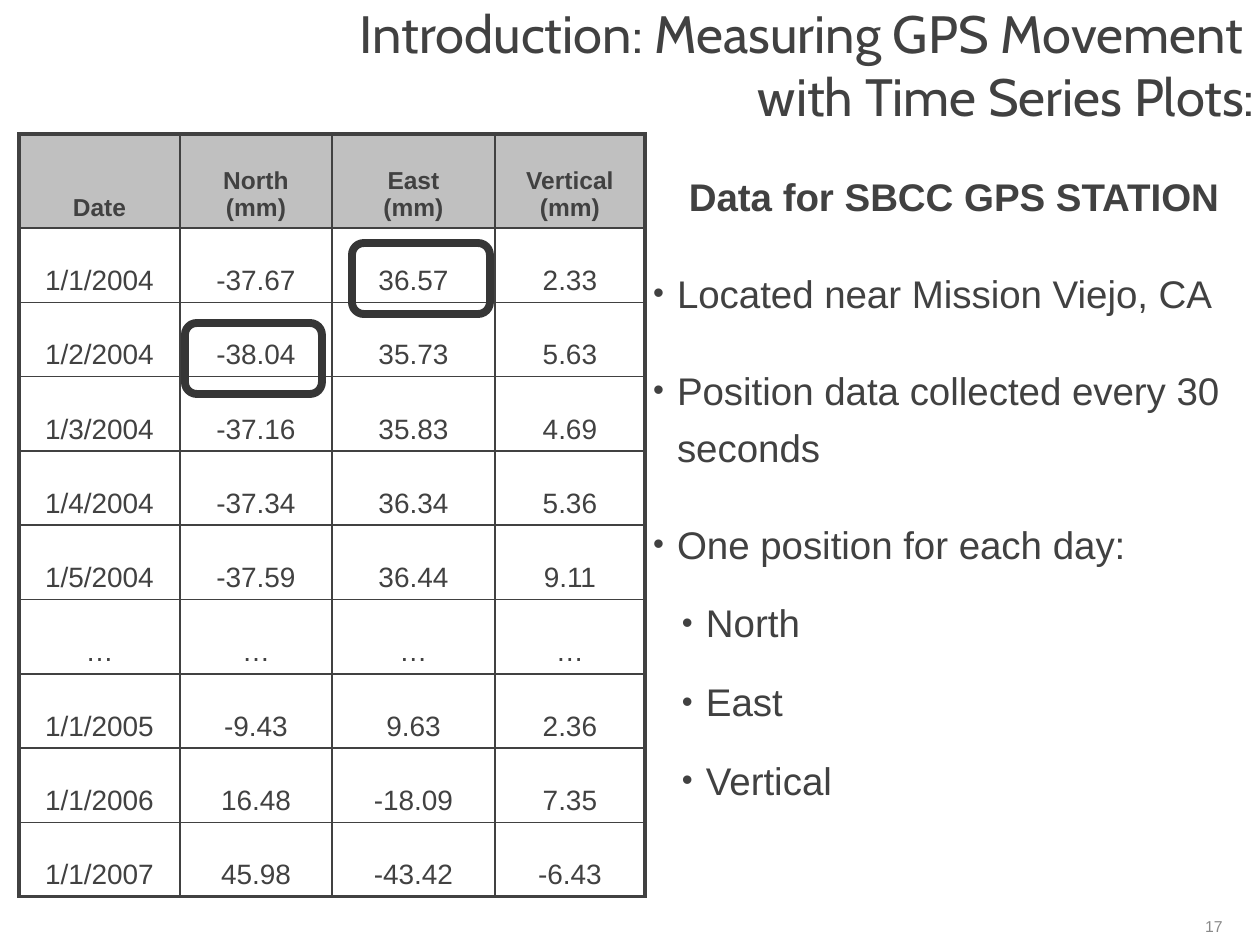
from dataclasses import dataclass

from lxml.etree import SubElement
from pptx import Presentation
from pptx.dml.color import RGBColor
from pptx.enum.shapes import MSO_SHAPE
from pptx.enum.text import MSO_ANCHOR, PP_ALIGN
from pptx.oxml.ns import qn
from pptx.util import Emu, Pt

EMU_PER_PX = 914400 / 126


@dataclass(frozen=True)
class Theme:
    ink: str = "414141"
    header_fill: str = "C0C0C0"
    highlight: str = "363636"
    muted: str = "898989"
    title_font: str = "Cabin"
    body_font: str = "Arial"
    title_size: int = 30
    body_size: int = 22
    header_size: int = 14
    cell_size: int = 16
    number_size: int = 9
    outer_border: float = 2.25
    inner_border: float = 1
    highlight_width: float = 4.5


THEME = Theme()

COLUMN_WIDTHS = [161, 152, 163, 150]
HEADER_HEIGHT = 94
DATA_HEIGHT = 669
ROWS = [
    ("Date", "North (mm)", "East (mm)", "Vertical (mm)"),
    ("1/1/2004", "-37.67", "36.57", "2.33"),
    ("1/2/2004", "-38.04", "35.73", "5.63"),
    ("1/3/2004", "-37.16", "35.83", "4.69"),
    ("1/4/2004", "-37.34", "36.34", "5.36"),
    ("1/5/2004", "-37.59", "36.44", "9.11"),
    ("…", "…", "…", "…"),
    ("1/1/2005", "-9.43", "9.63", "2.36"),
    ("1/1/2006", "16.48", "-18.09", "7.35"),
    ("1/1/2007", "45.98", "-43.42", "-6.43"),
]
HEADING = "Data for SBCC GPS STATION"
BULLETS = [
    (0, "Located near Mission Viejo, CA"),
    (0, "Position data collected every 30 seconds"),
    (0, "One position for each day:"),
    (1, "North"),
    (1, "East"),
    (1, "Vertical"),
]
HIGHLIGHTS = [(185, 323, 137, 71), (352, 243, 138, 71)]


def px(count):
    return Emu(round(count * EMU_PER_PX))


def rgb(code):
    return RGBColor.from_string(code)


def style(para, size, color=THEME.ink, name=THEME.body_font, bold=False,
          align=PP_ALIGN.LEFT):
    para.alignment = align
    para.font.size = Pt(size)
    para.font.name = name
    para.font.bold = bold
    para.font.color.rgb = rgb(color)


def set_margins(target, horizontal, vertical):
    target.margin_left = target.margin_right = px(horizontal)
    target.margin_top = target.margin_bottom = px(vertical)


def add_title(page, text):
    title = page.shapes.title
    title.left, title.top, title.width, title.height = map(px, (126, 0, 1134, 128))
    frame = title.text_frame
    frame.word_wrap = True
    frame.vertical_anchor = MSO_ANCHOR.MIDDLE
    set_margins(frame, 5, 3)
    frame.text = text
    style(frame.paragraphs[0], THEME.title_size, name=THEME.title_font,
          align=PP_ALIGN.RIGHT)


def add_text_box(page, left, top, width, height):
    box = page.shapes.add_textbox(px(left), px(top), px(width), px(height))
    box.text_frame.word_wrap = True
    return box.text_frame


def set_border(cell, side, width):
    line = SubElement(cell._tc.get_or_add_tcPr(), qn(f"a:ln{side}"), w=str(Pt(width)))
    fill = SubElement(line, qn("a:solidFill"))
    SubElement(fill, qn("a:srgbClr"), val=THEME.ink)


def fill_cell(cell, text, is_header, outer_sides):
    cell.text = text
    cell.vertical_anchor = MSO_ANCHOR.BOTTOM
    set_margins(cell, 25, 6)
    style(cell.text_frame.paragraphs[0],
          THEME.header_size if is_header else THEME.cell_size,
          bold=is_header, align=PP_ALIGN.CENTER)
    # Borders precede the fill in the cell properties.
    for side in "LRTB":
        set_border(cell, side,
                   THEME.outer_border if side in outer_sides else THEME.inner_border)
    if is_header:
        cell.fill.solid()
        cell.fill.fore_color.rgb = rgb(THEME.header_fill)
    else:
        cell.fill.background()


def add_data_table(page, left, top):
    last_row, last_column = len(ROWS) - 1, len(COLUMN_WIDTHS) - 1
    table = page.shapes.add_table(
        len(ROWS), len(COLUMN_WIDTHS), px(left), px(top),
        px(sum(COLUMN_WIDTHS)), px(HEADER_HEIGHT + DATA_HEIGHT)).table
    for column, width in zip(table.columns, COLUMN_WIDTHS):
        column.width = px(width)
    for r, values in enumerate(ROWS):
        table.rows[r].height = px(DATA_HEIGHT / last_row if r else HEADER_HEIGHT)
        for c, text in enumerate(values):
            edges = {"L": c == 0, "R": c == last_column, "T": r == 0, "B": r == last_row}
            outer_sides = [side for side, is_outer in edges.items() if is_outer]
            fill_cell(table.cell(r, c), text, r == 0, outer_sides)


def add_bullet(para, indent, hanging):
    props = para._p.get_or_add_pPr()
    props.set("marL", str(px(indent)))
    props.set("indent", str(-px(hanging)))
    color = SubElement(props, qn("a:buClr"))
    SubElement(color, qn("a:srgbClr"), val=THEME.ink)
    SubElement(props, qn("a:buSzPct"), val="81000")
    SubElement(props, qn("a:buFont"), typeface=THEME.body_font)
    SubElement(props, qn("a:buChar"), char="•")


def add_station_notes(page):
    frame = add_text_box(page, 648, 159, 612, 786)
    set_margins(frame, 5, 3)
    heading = frame.paragraphs[0]
    heading.text = HEADING
    heading.line_spacing = 1.25
    style(heading, THEME.body_size, bold=True, align=PP_ALIGN.CENTER)
    for level, text in BULLETS:
        para = frame.add_paragraph()
        para.text = text
        para.level = level
        para.line_spacing = 1.25
        para.space_before = Pt(12 if level else 22.2)
        add_bullet(para, 53 if level else 24, 24)
        style(para, THEME.body_size)


def add_highlight(page, left, top, width, height):
    frame = page.shapes.add_shape(MSO_SHAPE.FLOWCHART_ALTERNATE_PROCESS,
                                  px(left), px(top), px(width), px(height))
    frame.shadow.inherit = False
    frame.fill.background()
    frame.line.color.rgb = rgb(THEME.highlight)
    frame.line.width = Pt(THEME.highlight_width)


def add_page_number(page, number):
    frame = add_text_box(page, 1165, 908, 70, 37)
    frame.vertical_anchor = MSO_ANCHOR.MIDDLE
    frame.text = number
    style(frame.paragraphs[0], THEME.number_size, THEME.muted, align=PP_ALIGN.RIGHT)


def main():
    deck = Presentation()
    deck.slide_width, deck.slide_height = px(1260), px(945)
    page = deck.slides.add_slide(deck.slide_layouts[5])
    add_title(page, "Introduction: Measuring GPS Movement \vwith Time Series Plots:")
    add_data_table(page, 19, 134)
    add_station_notes(page)
    for bounds in HIGHLIGHTS:
        add_highlight(page, *bounds)
    add_page_number(page, "17")
    deck.save("out.pptx")


if __name__ == "__main__":
    main()
